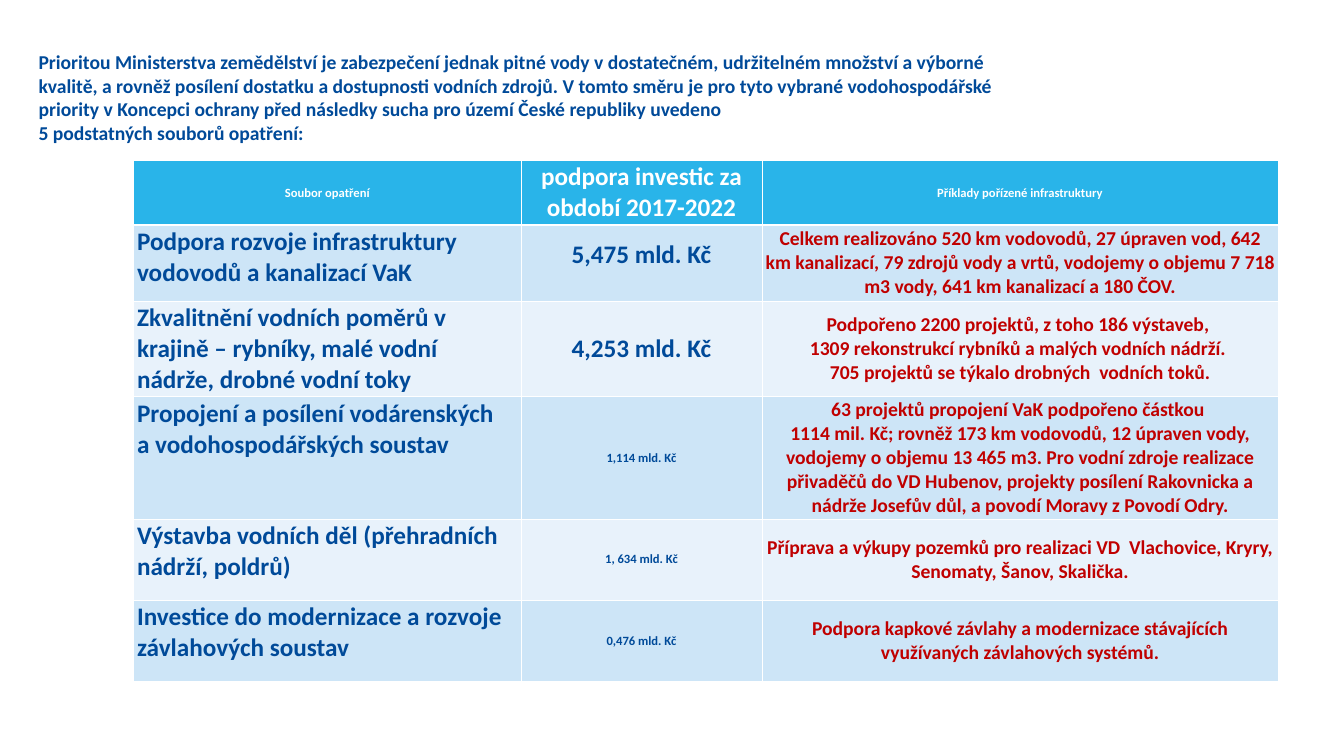
from lxml.etree import SubElement
from pptx import Presentation
from pptx.dml.color import RGBColor
from pptx.enum.text import MSO_ANCHOR, PP_ALIGN
from pptx.oxml.ns import qn
from pptx.util import Inches, Pt

WIDTH, HEIGHT = 26.67, 15
COLORS = {
    "white": "FFFFFF",
    "navy": "004A99",
    "red": "C00000",
    "header": "29B4E9",
    "odd_row": "CDE5F7",
    "even_row": "E8F2FB",
}
COLUMN_WIDTHS = [7.69, 4.78, 10.24]
ROW_HEIGHTS = [1.29, 1.5, 1.9, 2.43, 1.61, 1.61]
BODY_COLORS = ["navy", "navy", "red"]
HEADER_SIZES = [18, 36, 18]
CELL_MARGINS = {"margin_left": 0.07, "margin_right": 0.07, "margin_top": 0.03, "margin_bottom": 0.03}
INTRO = (
    "Prioritou Ministerstva zemědělství je zabezpečení jednak pitné vody v dostatečném, "
    "udržitelném množství a výborné kvalitě, a rovněž posílení dostatku a dostupnosti vodních "
    "zdrojů. V tomto směru je pro tyto vybrané vodohospodářské priority v Koncepci ochrany před "
    "následky sucha pro území České republiky uvedeno \n5 podstatných souborů opatření:"
)
HEADINGS = ["Soubor opatření", "podpora investic za období 2017-2022", "Příklady pořízené infrastruktury"]
MEASURES = [
    ("Podpora rozvoje infrastruktury vodovodů a kanalizací VaK", "5,475 mld. Kč", 36,
     "Celkem realizováno 520 km vodovodů, 27 úpraven vod, 642 km kanalizací, 79 zdrojů vody a vrtů, "
     "vodojemy o objemu 7 718 m3 vody, 641 km kanalizací a 180 ČOV."),
    ("Zkvalitnění vodních poměrů v krajině – rybníky, malé vodní nádrže, drobné vodní toky",
     "4,253 mld. Kč", 36,
     "Podpořeno 2200 projektů, z toho 186 výstaveb, \n1309 rekonstrukcí rybníků a malých vodních "
     "nádrží. \n705 projektů se týkalo drobných  vodních toků."),
    ("Propojení a posílení vodárenských \na vodohospodářských soustav", "1,114 mld. Kč", 18,
     "63 projektů propojení VaK podpořeno částkou \n1114 mil. Kč; rovněž 173 km vodovodů, 12 úpraven "
     "vody, vodojemy o objemu 13 465 m3. Pro vodní zdroje realizace přivaděčů do VD Hubenov, projekty "
     "posílení Rakovnicka a nádrže Josefův důl, a povodí Moravy z Povodí Odry."),
    ("Výstavba vodních děl (přehradních nádrží, poldrů)", "1, 634 mld. Kč", 18,
     "Příprava a výkupy pozemků pro realizaci VD  Vlachovice, Kryry, Senomaty, Šanov, Skalička."),
    ("Investice do modernizace a rozvoje závlahových soustav", "0,476 mld. Kč", 18,
     "Podpora kapkové závlahy a modernizace stávajících využívaných závlahových systémů."),
]


def write_text(text_frame, text, size, color, alignment=PP_ALIGN.LEFT):
    """Write one bold paragraph, turning newlines into line breaks."""
    paragraph = text_frame.paragraphs[0]
    paragraph.text = text
    paragraph.alignment = alignment
    for run in paragraph.runs:
        for name, value in {"name": "Calibri", "size": Pt(size), "bold": True}.items():
            setattr(run.font, name, value)
        run.font.color.rgb = RGBColor.from_string(COLORS[color])


def add_borders(cell, bottom_width):
    """Draw white lines on the four sides of a cell."""
    properties = cell._tc.get_or_add_tcPr()
    for side, width in {"lnL": 1, "lnR": 1, "lnT": 1, "lnB": bottom_width}.items():
        line = SubElement(properties, qn(f"a:{side}"), w=str(Pt(width)))
        fill = SubElement(line, qn("a:solidFill"))
        SubElement(fill, qn("a:srgbClr"), val=COLORS["white"])


def fill_cell(cell, text, size, color, background, centered, bottom_width=1):
    """Format one table cell and write its text."""
    add_borders(cell, bottom_width)
    cell.fill.solid()
    cell.fill.fore_color.rgb = RGBColor.from_string(COLORS[background])
    for name, value in CELL_MARGINS.items():
        setattr(cell, name, Inches(value))
    cell.vertical_anchor = MSO_ANCHOR.MIDDLE if centered else MSO_ANCHOR.TOP
    alignment = PP_ALIGN.CENTER if centered else PP_ALIGN.LEFT
    write_text(cell.text_frame, text, size, color, alignment)


def add_intro(slide, left, top, width, height):
    """Place the introductory statement."""
    box = slide.shapes.add_textbox(*map(Inches, (left, top, width, height)))
    box.text_frame.word_wrap = True
    write_text(box.text_frame, INTRO, 28, "navy")


def add_measures_table(slide, left, top):
    """Place the table of measures, investment support and examples."""
    frame = slide.shapes.add_table(
        len(ROW_HEIGHTS), len(COLUMN_WIDTHS), Inches(left), Inches(top),
        Inches(sum(COLUMN_WIDTHS)), Inches(sum(ROW_HEIGHTS)))
    table = frame.table
    for column, width in zip(table.columns, COLUMN_WIDTHS):
        column.width = Inches(width)
    for row, height in zip(table.rows, ROW_HEIGHTS):
        row.height = Inches(height)
    for index, (heading, size) in enumerate(zip(HEADINGS, HEADER_SIZES)):
        fill_cell(table.cell(0, index), heading, size, "white", "header", True, 3)
    for row, (measure, support, support_size, examples) in enumerate(MEASURES, start=1):
        background = "odd_row" if row % 2 else "even_row"
        texts = [(measure, 36), (support, support_size), (examples, 28)]
        for index, (text, size) in enumerate(texts):
            fill_cell(table.cell(row, index), text, size, BODY_COLORS[index], background, index > 0)
    table.cell(1, 1).margin_bottom = Inches(0.35)


def main():
    """Build the slide and save it."""
    presentation = Presentation()
    presentation.slide_width, presentation.slide_height = Inches(WIDTH), Inches(HEIGHT)
    slide = presentation.slides.add_slide(presentation.slide_layouts[6])
    add_intro(slide, 0.025 * WIDTH, 0.063 * HEIGHT, 0.755 * WIDTH, 0.24 * HEIGHT)
    add_measures_table(slide, 2.65, 3.18)
    presentation.save("out.pptx")


if __name__ == "__main__":
    main()
